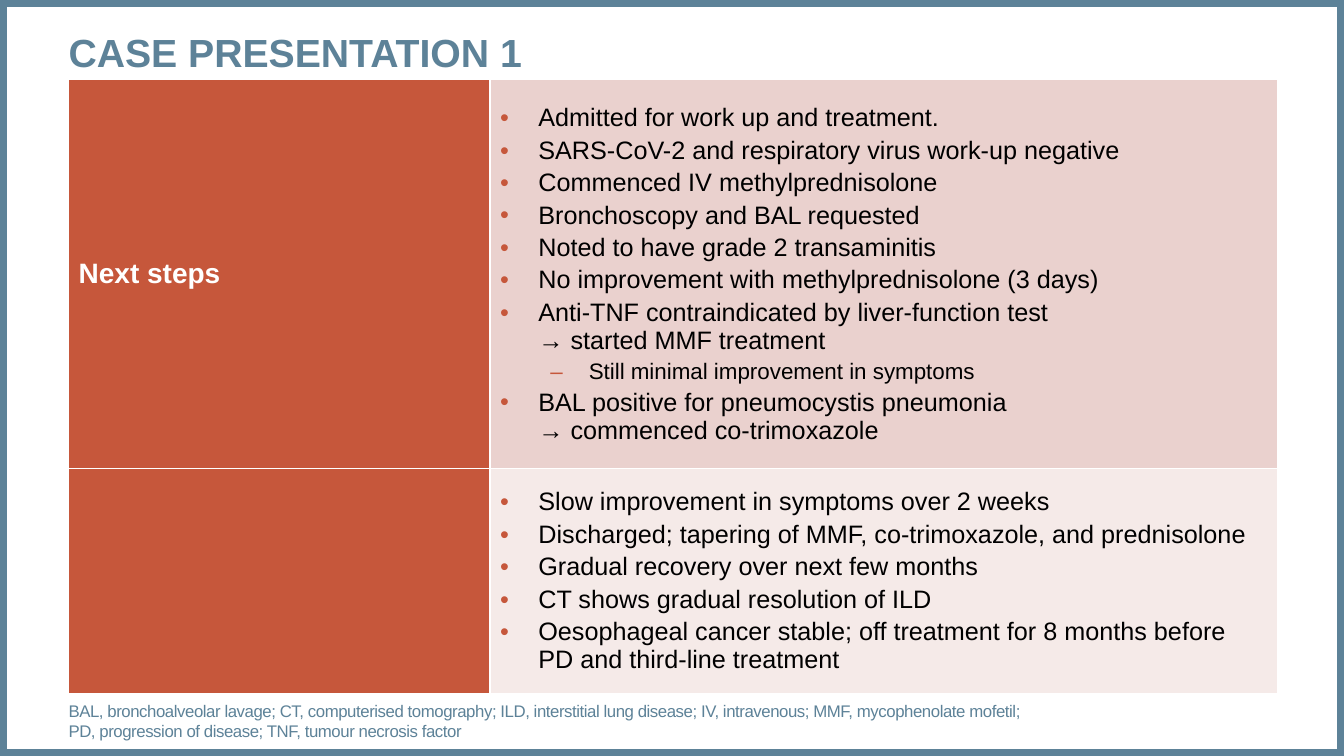
from copy import deepcopy
from dataclasses import dataclass

from lxml.etree import SubElement
from pptx import Presentation
from pptx.dml.color import RGBColor
from pptx.enum.shapes import MSO_SHAPE
from pptx.enum.text import MSO_ANCHOR as Anchor
from pptx.oxml.ns import qn
from pptx.util import Inches, Pt


@dataclass(frozen=True)
class Theme:
    """Colours, font and type sizes of the slide."""
    font: str = "Arial"
    slate: str = "5D8298"
    rust: str = "C6573B"
    rose: str = "EAD1CE"
    blush: str = "F5EAE8"
    white: str = "FFFFFF"
    black: str = "000000"
    title: int = 28
    heading: int = 20
    body: int = 18
    detail: int = 16
    note: int = 12


THEME = Theme()
NEXT_STEPS = [
    (0, "Admitted for work up and treatment."),
    (0, "SARS-CoV-2 and respiratory virus work-up negative"),
    (0, "Commenced IV methylprednisolone"),
    (0, "Bronchoscopy and BAL requested"),
    (0, "Noted to have grade 2 transaminitis"),
    (0, "No improvement with methylprednisolone (3 days)"),
    (0, "Anti-TNF contraindicated by liver-function test \n→ started MMF treatment"),
    (1, "Still minimal improvement in symptoms"),
    (0, "BAL positive for pneumocystis pneumonia\n→ commenced co-trimoxazole"),
]
OUTCOME = [
    (0, "Slow improvement in symptoms over 2 weeks"),
    (0, "Discharged; tapering of MMF, co-trimoxazole, and prednisolone"),
    (0, "Gradual recovery over next few months"),
    (0, "CT shows gradual resolution of ILD"),
    (0, "Oesophageal cancer stable; off treatment for 8 months before PD and third-line treatment"),
]
ROWS = [("Next steps", NEXT_STEPS, THEME.rose, 3.64), ("", OUTCOME, THEME.blush, 2.1)]
ABBREVIATIONS = (
    "BAL, bronchoalveolar lavage; CT, computerised tomography; ILD, interstitial lung disease; "
    "IV, intravenous; MMF, mycophenolate mofetil; \n"
    "PD, progression of disease; TNF, tumour necrosis factor"
)


def write(para, text, size, color, bold=False, spacing=0):
    """Write text into a paragraph, with one format for runs and line breaks."""
    para.text = text
    for span in para.runs:
        font = span.font
        font.name, font.size, font.bold = THEME.font, Pt(size), bold
        font.color.rgb = RGBColor.from_string(color)
        if spacing:
            font._element.set("spc", str(round(spacing * 100)))
    for line_break in para._p.findall(qn("a:br")):
        line_break.append(deepcopy(para.runs[0].font._element))


def add_text(page, left, top, width, height, text, anchor=Anchor.TOP, **style):
    """Add a text box without insets."""
    frame = page.shapes.add_textbox(*map(Inches, (left, top, width, height))).text_frame
    frame.word_wrap = True
    frame.vertical_anchor = anchor
    frame.margin_left = frame.margin_right = frame.margin_top = frame.margin_bottom = 0
    write(frame.paragraphs[0], text, **style)


def add_frame(page, width, height):
    """Outline the whole page."""
    frame = page.shapes.add_shape(MSO_SHAPE.RECTANGLE, 0, 0, width, height)
    frame.shadow.inherit = False
    frame.fill.background()
    frame.line.color.rgb = RGBColor.from_string(THEME.slate)
    frame.line.width = Pt(10)


def set_bullet(para, level):
    """Give a paragraph its hanging indent and coloured bullet."""
    para.level = level
    props = para._p.get_or_add_pPr()
    props.set("marL", str(Inches(0.38 + 0.5 * level)))
    props.set("indent", str(Inches(-0.38)))
    SubElement(SubElement(props, qn("a:buClr")), qn("a:srgbClr"), val=THEME.rust)
    SubElement(props, qn("a:buFont"), typeface=THEME.font)
    SubElement(props, qn("a:buChar"), char="•–"[level])


def fill_bullets(cell, items):
    """Fill a cell with bulleted paragraphs."""
    frame = cell.text_frame
    for index, (level, text) in enumerate(items):
        para = frame.add_paragraph() if index else frame.paragraphs[0]
        set_bullet(para, level)
        if index:
            para.space_before = Pt(3)
        write(para, text, THEME.detail if level else THEME.body, THEME.black)


def style_cell(cell, color):
    """Set a cell's borders, fill, insets and anchor."""
    props = cell._tc.get_or_add_tcPr()
    for side in ("lnL", "lnR", "lnT", "lnB"):
        line = SubElement(props, qn(f"a:{side}"), w=str(Pt(1)))
        SubElement(SubElement(line, qn("a:solidFill")), qn("a:srgbClr"), val=THEME.white)
    cell.fill.solid()
    cell.fill.fore_color.rgb = RGBColor.from_string(color)
    cell.vertical_anchor = Anchor.MIDDLE
    cell.margin_left = cell.margin_right = Inches(0.1)
    cell.margin_top = cell.margin_bottom = Inches(0.13)


def add_case_table(page):
    """Add the table of steps and outcome."""
    height = sum(row[-1] for row in ROWS)
    table = page.shapes.add_table(
        len(ROWS), 2, Inches(0.68), Inches(0.79), Inches(11.99), Inches(height)
    ).table
    table.first_row = table.horz_banding = False
    for column, width in zip(table.columns, (4.18, 7.81)):
        column.width = Inches(width)
    for index, (heading, items, color, row_height) in enumerate(ROWS):
        table.rows[index].height = Inches(row_height)
        label, content = table.cell(index, 0), table.cell(index, 1)
        style_cell(label, THEME.rust)
        style_cell(content, color)
        if heading:
            para = label.text_frame.paragraphs[0]
            para.space_after = Pt(6)
            write(para, heading, THEME.heading, THEME.white, bold=True)
        fill_bullets(content, items)


def main():
    """Build the slide and save it."""
    deck = Presentation()
    deck.slide_width, deck.slide_height = Inches(13.33), Inches(7.5)
    page = deck.slides.add_slide(deck.slide_layouts[6])
    add_frame(page, deck.slide_width, deck.slide_height)
    add_text(page, 0.68, 0.28, 11.99, 0.94, "CASE PRESENTATION 1",
             size=THEME.title, color=THEME.slate, bold=True)
    add_case_table(page)
    add_text(page, 0.68, 6.95, 11.13, 0.4, ABBREVIATIONS, anchor=Anchor.MIDDLE,
             size=THEME.note, color=THEME.slate, spacing=-0.3)
    deck.save("out.pptx")


if __name__ == "__main__":
    main()
